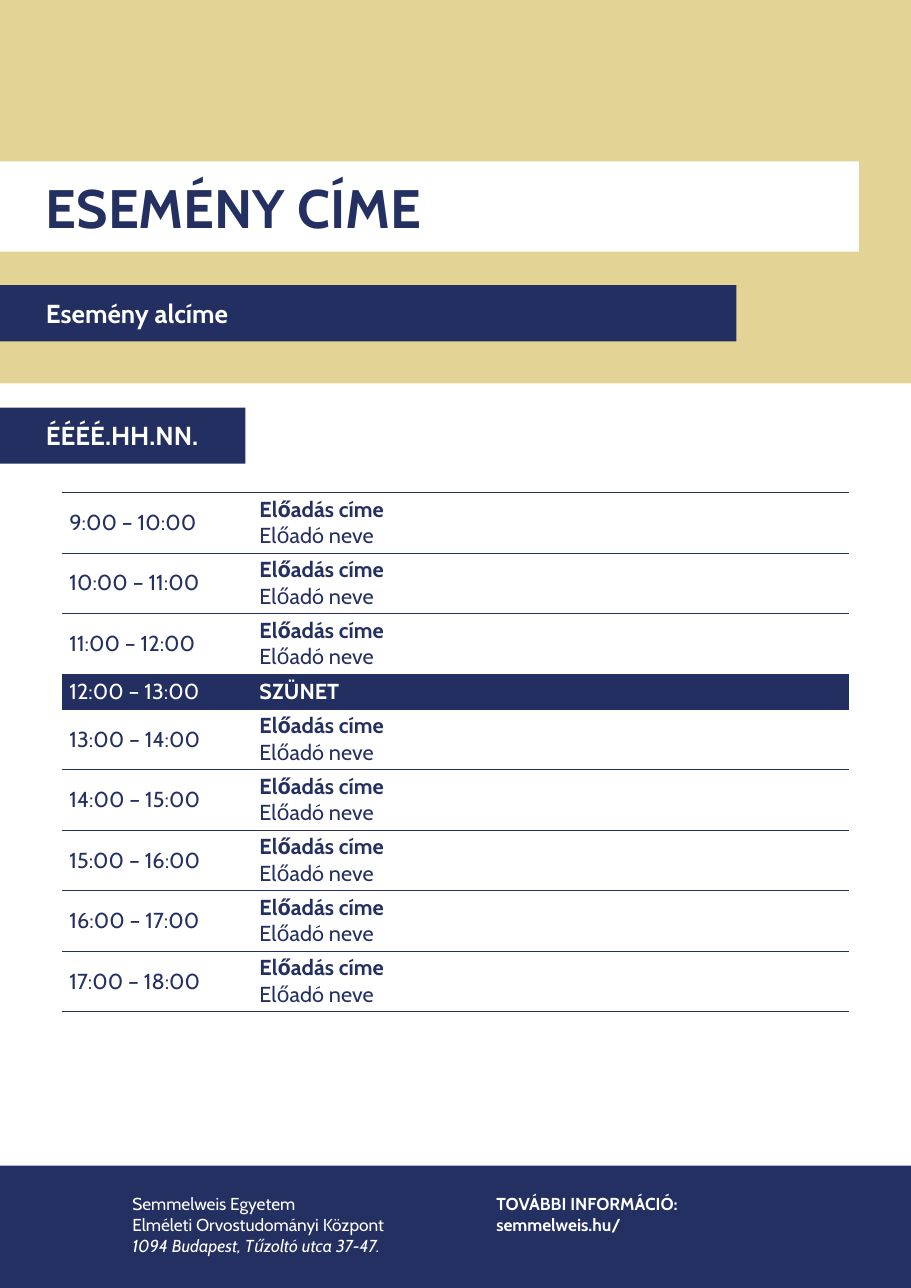
"""Build the event programme poster."""
from dataclasses import dataclass

from lxml import etree
from pptx import Presentation
from pptx.dml.color import RGBColor
from pptx.enum import shapes, text
from pptx.oxml import ns
from pptx.util import Pt


@dataclass(frozen=True)
class Theme:
    """Hold colours, font and type sizes."""
    navy: str = "242F62"
    deep: str = "232F61"
    gold: str = "E3D496"
    white: str = "FFFFFF"
    font: str = "Cabin"
    title: int = 50
    head: int = 24
    body: int = 20
    foot: int = 16


T = Theme()
WIDE, HIGH = 841.68, 1190.16
BANDS = [(1077.12, 113.04, T.navy), (0, 354.24, T.gold)]
BARS = [
    ("ESEMÉNY CÍME", 149.04, 793.44, 83.52, T.white, T.navy, T.title),
    ("Esemény alcíme", 263.52, 680.4, 51.84, T.deep, T.white, T.head),
    ("ÉÉÉÉ.HH.NN.", 376.56, 226.8, 51.84, T.deep, T.white, T.head),
]
TALK = ("Előadás címe", "Előadó neve")
PAUSE = ("SZÜNET",)
START, NOON = 9, 12
PLAN = [TALK] * 3 + [PAUSE] + [TALK] * 5
COLS = (175.68, 551.52)
TALL, SHORT = 55.9, 32.4
NOTES = [
    (115.2, 278.64, [("Semmelweis Egyetem", False, False),
                     ("Elméleti Orvostudományi Központ", False, False),
                     ("1094 Budapest, Tűzoltó utca 37-47.", False, True)]),
    (451.44, 228.24, [("TOVÁBBI INFORMÁCIÓ:", True, False),
                      ("semmelweis.hu/", True, False)]),
]


def style(para, size, hue, bold=False, slant=False):
    """Set the font of a paragraph."""
    font = para.font
    font.name, font.size = T.font, Pt(size)
    font.bold, font.italic = bold, slant
    font.color.rgb = RGBColor.from_string(hue)


def fill(frame, lines, size, hue):
    """Write (words, bold, italic) lines into a text frame."""
    frame.word_wrap = True
    for i, (words, bold, slant) in enumerate(lines):
        para = frame.add_paragraph() if i else frame.paragraphs[0]
        para.text = words
        para.alignment = text.PP_ALIGN.LEFT
        style(para, size, hue, bold, slant)


def block(slide, top, wide, high, hue):
    """Draw a plain rectangle from the left edge."""
    box = slide.shapes.add_shape(
        shapes.MSO_SHAPE.RECTANGLE, 0, Pt(top), Pt(wide), Pt(high))
    box.shadow.inherit = False
    box.fill.solid()
    box.fill.fore_color.rgb = RGBColor.from_string(hue)
    box.line.fill.background()
    return box


def rule(cell):
    """Give a cell lines above and below, none at its sides."""
    props = cell._tc.get_or_add_tcPr()
    for i, side in enumerate(("lnL", "lnR", "lnT", "lnB")):
        line = etree.Element(ns.qn("a:" + side), w=str(Pt(1)))
        if side in ("lnL", "lnR"):
            etree.SubElement(line, ns.qn("a:noFill"))
        else:
            paint = etree.SubElement(line, ns.qn("a:solidFill"))
            etree.SubElement(paint, ns.qn("a:srgbClr"), val=T.deep)
        props.insert(i, line)


def agenda(slide):
    """Draw the timetable."""
    highs = [SHORT if what is PAUSE else TALL for what in PLAN]
    grid = slide.shapes.add_table(
        len(PLAN), len(COLS), Pt(56.88), Pt(455.1),
        Pt(sum(COLS)), Pt(sum(highs))).table
    grid.first_row = grid.horz_banding = False
    for col, wide in zip(grid.columns, COLS):
        col.width = Pt(wide)
    for i, what in enumerate(PLAN):
        grid.rows[i].height = Pt(highs[i])
        hour = START + i
        rest = hour == NOON
        parts = ([(f"{hour}:00 – {hour + 1}:00", False, False)],
                 [(words, j == 0, False) for j, words in enumerate(what)])
        for cell, lines in zip(grid.rows[i].cells, parts):
            cell.vertical_anchor = text.MSO_ANCHOR.MIDDLE
            fill(cell.text_frame, lines, T.body, T.white if rest else T.navy)
            if rest:
                cell.fill.solid()
                cell.fill.fore_color.rgb = RGBColor.from_string(T.deep)
            else:
                cell.fill.background()
            rule(cell)


def main():
    """Compose and save the poster."""
    deck = Presentation()
    deck.slide_width, deck.slide_height = Pt(WIDE), Pt(HIGH)
    slide = deck.slides.add_slide(deck.slide_layouts[6])
    for top, high, hue in BANDS:
        block(slide, top, WIDE, high, hue)
    for words, top, wide, high, back, hue, size in BARS:
        frame = block(slide, top, wide, high, back).text_frame
        frame.margin_left, frame.margin_right = Pt(42.5), Pt(14.4)
        frame.margin_top = frame.margin_bottom = Pt(11.5)
        frame.vertical_anchor = text.MSO_ANCHOR.MIDDLE
        fill(frame, [(words, True, False)], size, hue)
    for left, wide, lines in NOTES:
        note = slide.shapes.add_textbox(
            Pt(left), Pt(1099.44), Pt(wide), Pt(68.4))
        fill(note.text_frame, lines, T.foot, T.white)
    agenda(slide)
    deck.save("out.pptx")


if __name__ == "__main__":
    main()
